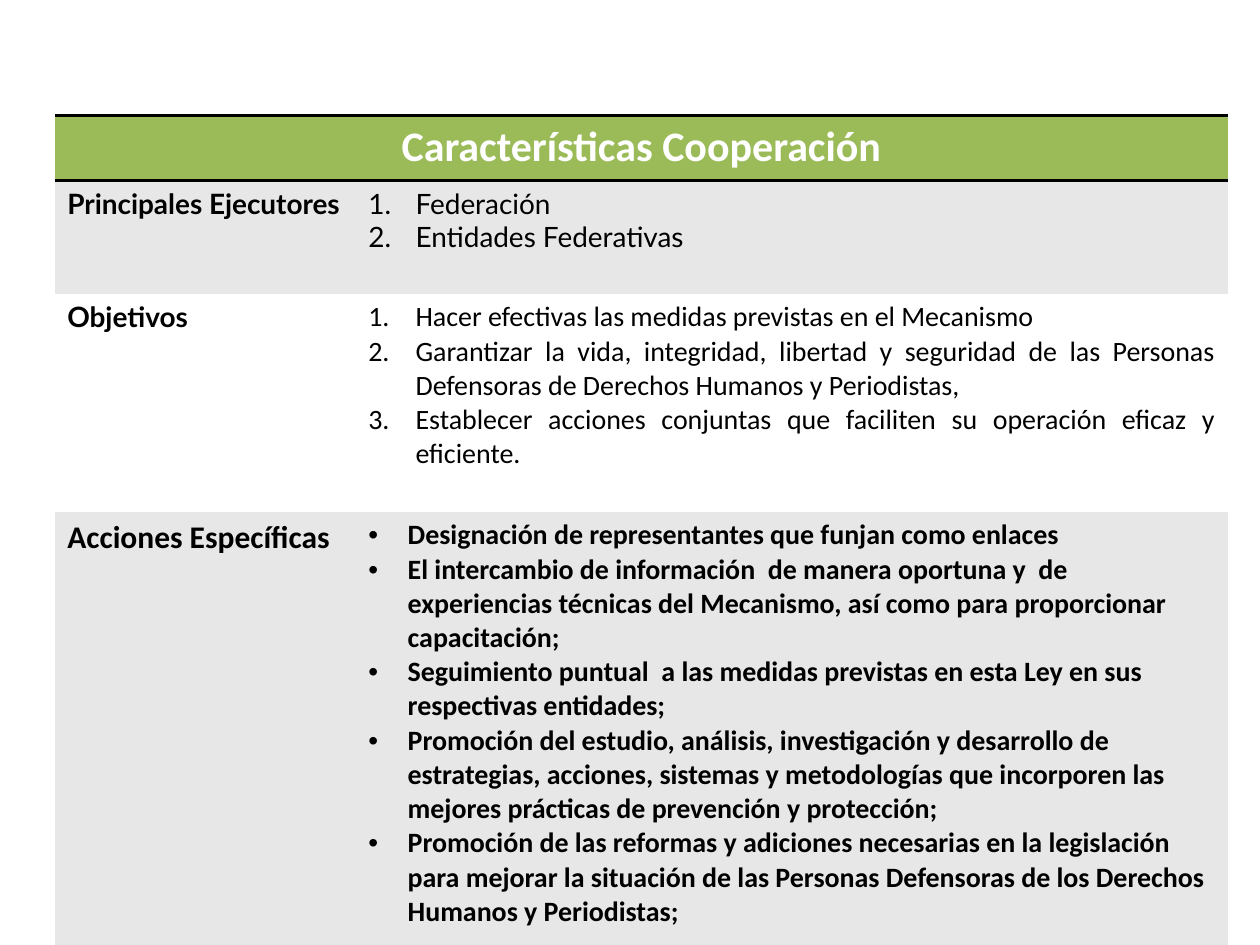
from lxml.etree import SubElement
from pptx import Presentation
from pptx.dml.color import RGBColor
from pptx.enum.text import PP_ALIGN
from pptx.oxml import parse_xml
from pptx.oxml.ns import nsdecls, qn
from pptx.util import Pt

HEAD = "Características Cooperación"
ROWS = [
    ("Principales Ejecutores", ["Federación", "Entidades Federativas"]),
    ("Objetivos", [
        "Hacer efectivas las medidas previstas en el Mecanismo",
        "Garantizar la vida, integridad, libertad y seguridad de las Personas Defensoras de Derechos Humanos y Periodistas,",
        "Establecer acciones conjuntas que faciliten su operación eficaz y eficiente.",
    ]),
    ("Acciones Específicas", [
        "Designación de representantes que funjan como enlaces",
        "El intercambio de información  de manera oportuna y  de experiencias técnicas del Mecanismo, así como para proporcionar capacitación;",
        "Seguimiento puntual  a las medidas previstas en esta Ley en sus respectivas entidades;",
        "Promoción del estudio, análisis, investigación y desarrollo de estrategias, acciones, sistemas y metodologías que incorporen las mejores prácticas de prevención y protección;",
        "Promoción de las reformas y adiciones necesarias en la legislación para mejorar la situación de las Personas Defensoras de los Derechos Humanos y Periodistas;",
    ]),
]

LATO = {"name": "Lato", "size": Pt(16), "bold": True}
CALIBRI = {"name": "Calibri", "size": Pt(16), "bold": True}
PLAIN = {"bold": False}
TITLE = CALIBRI | {"size": Pt(24)}
LABELS = [LATO, LATO, CALIBRI | {"size": Pt(18)}]
LISTS = [
    (LATO | PLAIN, PP_ALIGN.JUSTIFY, 27, True),
    (CALIBRI | PLAIN, PP_ALIGN.JUSTIFY, 27, True),
    (CALIBRI, PP_ALIGN.LEFT, 22.5, False),
]
FILLS = ["E7E7E7", "FFFFFF", "E7E7E7"]
LEFT, TOP = 31.3, 66
WIDTHS = [172, 498.5]
HEIGHTS = [37, 65, 124.5, 247.5]
NO_STYLE = "{2D5ABB26-0587-4C30-8999-92F81FD0307C}"


def paint(fill, tone):
    fill.solid()
    fill.fore_color.rgb = RGBColor.from_string(tone)


def write(cell, lines, form, tone="000000", align=PP_ALIGN.LEFT):
    frame = cell.text_frame
    for i, line in enumerate(lines):
        para = frame.add_paragraph() if i else frame.paragraphs[0]
        para.alignment = align
        run = para.add_run()
        run.text = line
        for key, value in form.items():
            setattr(run.font, key, value)
        paint(run.font.fill, tone)


def mark(cell, indent, count):
    for para in cell.text_frame.paragraphs:
        props = para._p.get_or_add_pPr()
        props.set("marL", str(Pt(indent)))
        props.set("indent", str(-Pt(indent)))
        if count:
            SubElement(props, qn("a:buFont"), typeface="+mj-lt")
            SubElement(props, qn("a:buAutoNum"), type="arabicPeriod")
        else:
            SubElement(props, qn("a:buFont"), typeface="Arial")
            SubElement(props, qn("a:buChar"), char="•")


def rule(cell, sides):
    props = cell._tc.get_or_add_tcPr()
    for i, side in enumerate(sides):
        props.insert(i, parse_xml(
            f'<a:ln{side} {nsdecls("a")} w="{Pt(2)}"><a:solidFill>'
            f'<a:srgbClr val="000000"/></a:solidFill></a:ln{side}>'))


def main():
    deck = Presentation()
    deck.slide_width, deck.slide_height = Pt(720), Pt(540)
    slide = deck.slides.add_slide(deck.slide_layouts[6])
    frame = slide.shapes.add_table(len(HEIGHTS), len(WIDTHS), Pt(LEFT), Pt(TOP),
                                   Pt(sum(WIDTHS)), Pt(sum(HEIGHTS)))
    table = frame.table
    table.horz_banding = False
    table._tbl.tblPr.find(qn("a:tableStyleId")).text = NO_STYLE
    for col, width in zip(table.columns, WIDTHS):
        col.width = Pt(width)
    for row, height in zip(table.rows, HEIGHTS):
        row.height = Pt(height)

    head = table.cell(0, 0)
    head.merge(table.cell(0, 1))
    write(head, [HEAD], TITLE, "FFFFFF", PP_ALIGN.CENTER)
    for cell in table.rows[0].cells:
        paint(cell.fill, "9BBB59")
        rule(cell, "TB")

    for i, (label, lines) in enumerate(ROWS):
        name, body = table.rows[i + 1].cells
        form, align, indent, count = LISTS[i]
        write(name, [label], LABELS[i])
        write(body, lines, form, align=align)
        mark(body, indent, count)
        for cell in (name, body):
            paint(cell.fill, FILLS[i])
    deck.save("out.pptx")


if __name__ == "__main__":
    main()
